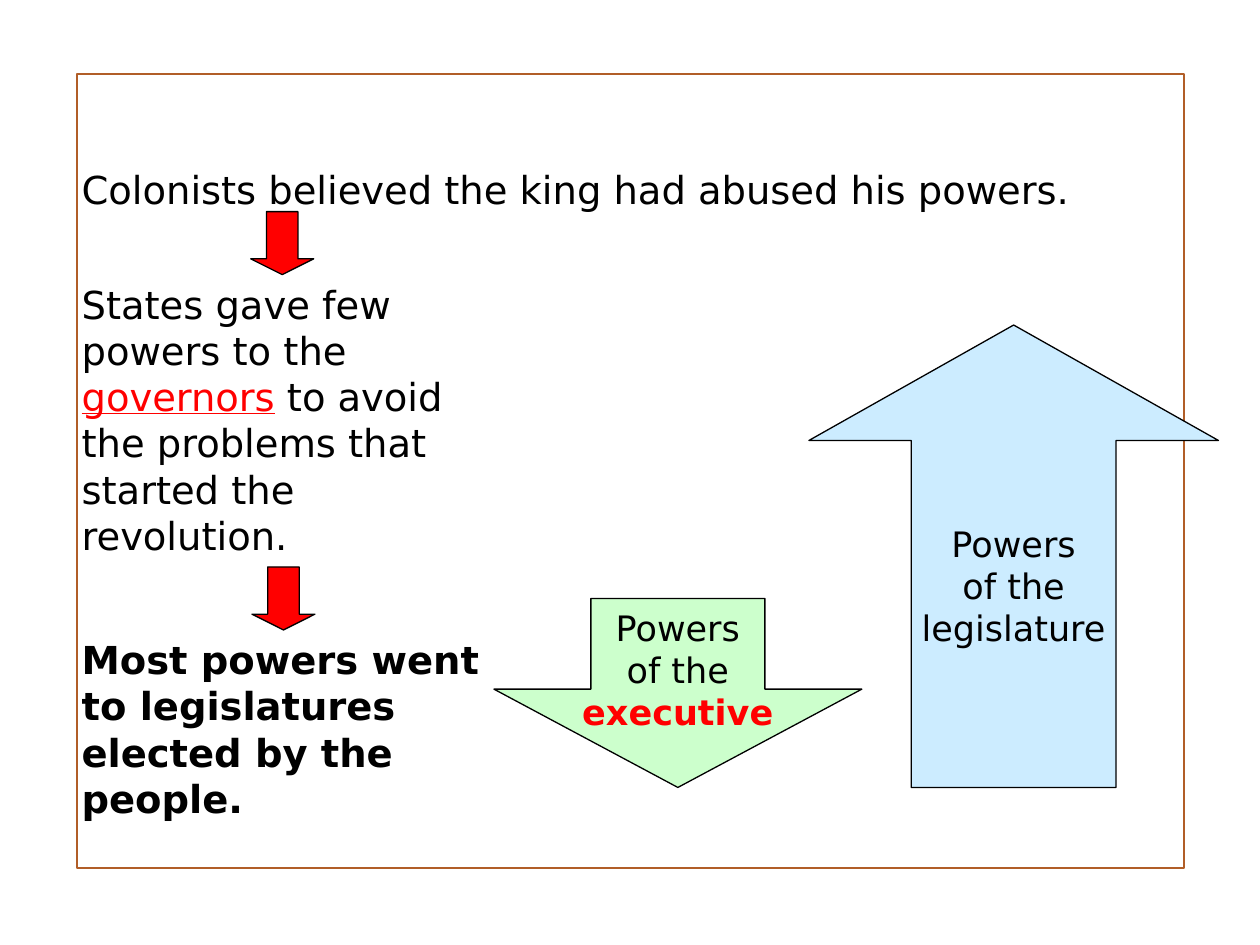
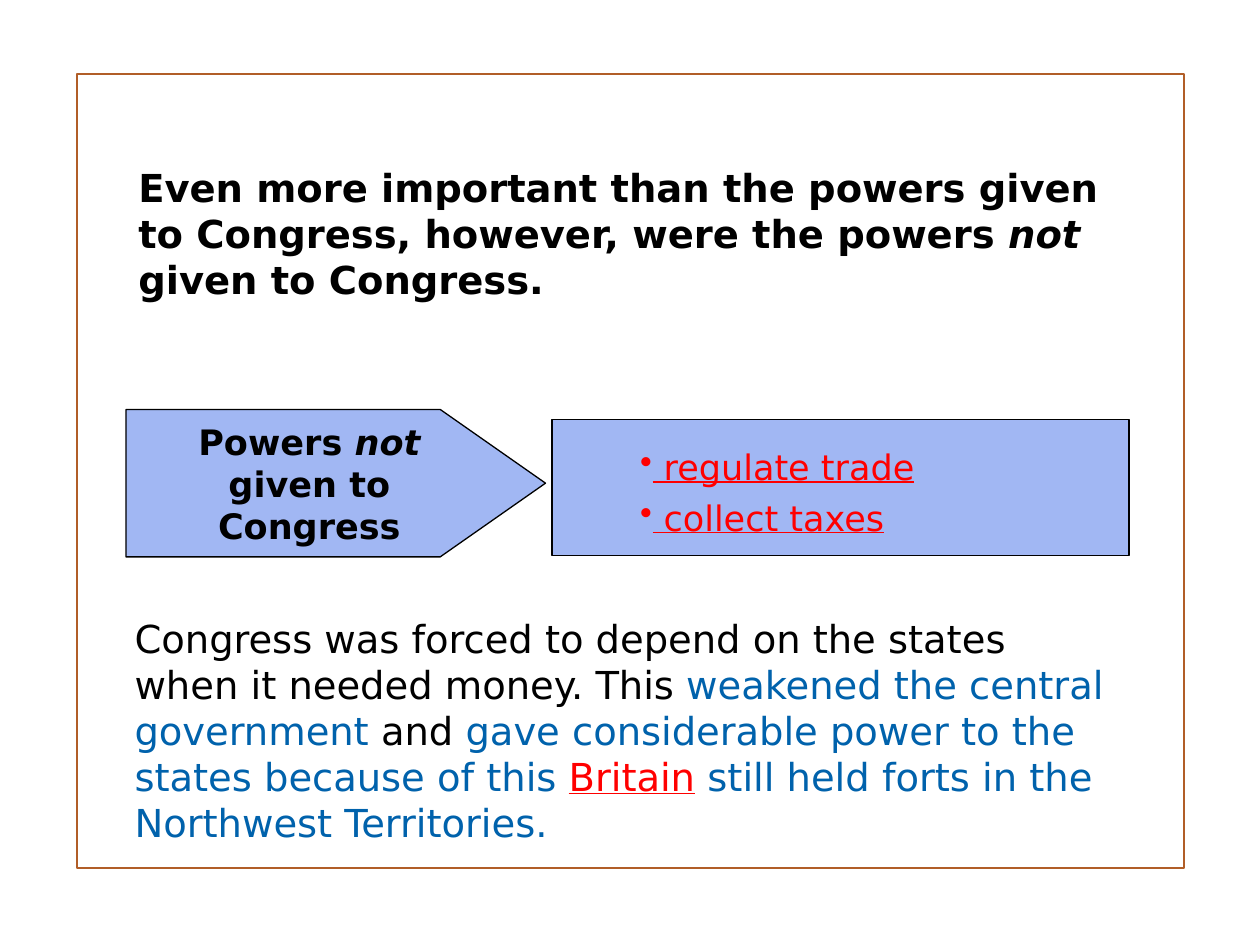
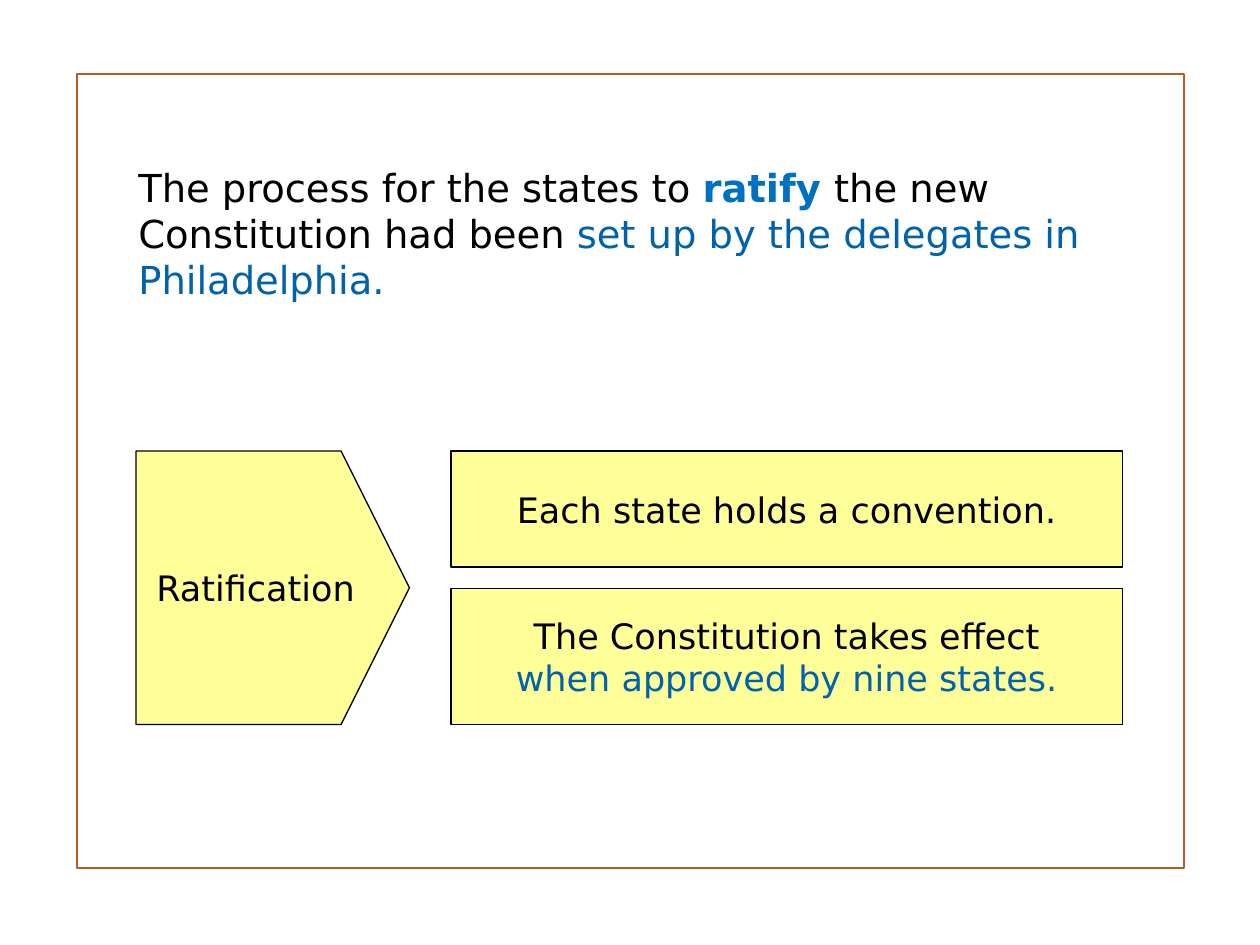
from dataclasses import dataclass, field
from typing import NamedTuple, Optional

from lxml import etree
from pptx import Presentation
from pptx import util as u
from pptx.dml import color as dml
from pptx.enum import shapes as kinds, text as txt
from pptx.oxml import ns


# Theme: colours, type sizes and text styles
@dataclass(frozen=True)
class Theme:
    font: str = "DejaVu Sans"
    body: int = 22
    label: int = 20
    outline: float = 0.75
    frame_outline: float = 1.25
    black: str = "000000"
    red: str = "FF0000"
    blue: str = "0062AC"
    bright_blue: str = "0070C0"
    frame: str = "B15E28"
    green_fill: str = "CCFFCC"
    sky_fill: str = "CCECFF"
    violet_fill: str = "A1B7F3"
    yellow_fill: str = "FFFF99"


THEME = Theme()
BOLD = {"bold": True}
BOLD_ITALIC = {"bold": True, "italic": True}
UNDERLINE = {"underline": True}


class Span(NamedTuple):
    text: str
    color: str = THEME.black
    format: dict = {}


class Place(NamedTuple):
    left: float
    top: float
    width: float
    height: float

    def lengths(self) -> list:
        return [u.Inches(value) for value in self]


Lines = list[list[Span]]


@dataclass(frozen=True)
class Statement:
    place: Place
    spans: list[Span]


@dataclass(frozen=True)
class Block:
    kind: kinds.MSO_SHAPE
    place: Place
    fill: Optional[str]
    lines: Lines = field(default_factory=list)
    adjust: tuple = ()
    bullet: str = ""
    inset: float = 0.1
    line_color: str = THEME.black
    line_width: float = THEME.outline


# Drawing
def write_lines(frame, lines: Lines, size: int, align, bullet: str = "") -> None:
    for index, spans in enumerate(lines):
        paragraph = frame.paragraphs[0] if index == 0 else frame.add_paragraph()
        paragraph.alignment = align
        if bullet:
            paragraph.line_spacing = 1.2
            mark = etree.SubElement(paragraph._p.get_or_add_pPr(), ns.qn("a:buChar"))
            mark.set("char", bullet)
        for span in spans:
            run = paragraph.add_run()
            run.text = span.text
            values = {"name": THEME.font, "size": u.Pt(size), **span.format}
            for name, value in values.items():
                setattr(run.font, name, value)
            run.font.color.rgb = dml.RGBColor.from_string(span.color)


def draw_statement(slide, statement: Statement) -> None:
    frame = slide.shapes.add_textbox(*statement.place.lengths()).text_frame
    frame.word_wrap = True
    frame.auto_size = txt.MSO_AUTO_SIZE.SHAPE_TO_FIT_TEXT
    write_lines(frame, [statement.spans], THEME.body, txt.PP_ALIGN.LEFT)


def draw_block(slide, block: Block):
    shape = slide.shapes.add_shape(block.kind, *block.place.lengths())
    shape.shadow.inherit = False
    for index, value in enumerate(block.adjust):
        shape.adjustments[index] = value
    if block.fill:
        shape.fill.solid()
        shape.fill.fore_color.rgb = dml.RGBColor.from_string(block.fill)
    else:
        shape.fill.background()
    shape.line.color.rgb = dml.RGBColor.from_string(block.line_color)
    shape.line.width = u.Pt(block.line_width)
    frame = shape.text_frame
    settings = {"word_wrap": False, "vertical_anchor": txt.MSO_ANCHOR.MIDDLE,
                "margin_left": u.Inches(block.inset)}
    for name, value in settings.items():
        setattr(frame, name, value)
    align = txt.PP_ALIGN.LEFT if block.bullet else txt.PP_ALIGN.CENTER
    write_lines(frame, block.lines, THEME.label, align, block.bullet)
    return shape


# Content
SHAPE = kinds.MSO_SHAPE
PAGE_FRAME = Block(SHAPE.RECTANGLE, Place(0.61, 0.59, 8.79, 6.3), None,
                   line_color=THEME.frame, line_width=THEME.frame_outline)
OPENING = Place(1, 1.25, 8, 1.21)


def step_arrow(left: float, top: float) -> Block:
    return Block(SHAPE.DOWN_ARROW, Place(left, top, 0.5, 0.5), THEME.red,
                 adjust=(0.5, 0.25))


def yellow_block(kind, place: Place, lines: Lines, adjust: tuple = ()) -> Block:
    return Block(kind, place, THEME.yellow_fill, lines, adjust)


STATE_POWERS = [
    Statement(Place(0.55, 1.27, 9.3, 0.47),
              [Span("Colonists believed the king had abused his powers.")]),
    Statement(Place(0.55, 2.18, 3.33, 2.32), [
        Span("States gave few powers to the "),
        Span("governors", THEME.red, UNDERLINE),
        Span(" to avoid the problems that started the revolution."),
    ]),
    Block(SHAPE.DOWN_ARROW, Place(3.92, 4.75, 2.92, 1.5), THEME.green_fill,
          [[Span("Powers")], [Span("of the")], [Span("executive", THEME.red, BOLD)]],
          (0.473, 0.52)),
    Block(SHAPE.UP_ARROW, Place(6.42, 2.58, 3.25, 3.67), THEME.sky_fill,
          [[Span("Powers")], [Span("of the")], [Span("legislature")]],
          (0.5, 0.282)),
    Statement(Place(0.55, 5, 3.51, 1.58), [
        Span("Most powers went to legislatures elected by the people.", format=BOLD),
    ]),
    step_arrow(2, 4.5),
    step_arrow(1.99, 1.68),
]

CONGRESS_LIMITS = [
    Statement(OPENING, [
        Span("Even more important than the powers given to Congress, "
             "however, were the powers ", format=BOLD),
        Span("not", format=BOLD_ITALIC),
        Span(" given to Congress.", format=BOLD),
    ]),
    Block(SHAPE.RECTANGLE, Place(4.38, 3.33, 4.58, 1.08), THEME.violet_fill,
          [[Span(power, THEME.red, UNDERLINE)]
           for power in (" regulate trade", " collect taxes")],
          bullet="•", inset=0.7),
    Block(SHAPE.PENTAGON, Place(1, 3.25, 3.33, 1.17), THEME.violet_fill,
          [[Span("Powers ", format=BOLD), Span("not", format=BOLD_ITALIC)],
           [Span("given to", format=BOLD)], [Span("Congress", format=BOLD)]],
          (0.714,)),
    Statement(Place(0.97, 4.83, 8, 1.95), [
        Span("Congress was forced to depend on the states when it needed money. This "),
        Span("weakened the central government ", THEME.blue),
        Span("and "),
        Span("gave considerable power to the states because of this ", THEME.blue),
        Span("Britain", THEME.red, UNDERLINE),
        Span(" still held forts in the Northwest Territories.", THEME.blue),
    ]),
]

RATIFICATION = [
    Statement(OPENING, [
        Span("The process for the states to "),
        Span("ratify ", THEME.bright_blue, BOLD),
        Span("the new Constitution had been "),
        Span("set up by the delegates in Philadelphia.", THEME.blue),
    ]),
    yellow_block(SHAPE.RECTANGLE, Place(3.58, 3.58, 5.33, 0.92),
                 [[Span("Each state holds a convention.")]]),
    yellow_block(SHAPE.RECTANGLE, Place(3.58, 4.67, 5.33, 1.08),
                 [[Span("The Constitution takes effect")],
                  [Span("when approved by nine states.", THEME.blue)]]),
    yellow_block(SHAPE.PENTAGON, Place(1.08, 3.58, 2.17, 2.17),
                 [[Span("Ratification")]], (0.25,)),
]


def main() -> None:
    deck = Presentation()
    deck.slide_width, deck.slide_height = u.Inches(10), u.Inches(7.5)
    blank = deck.slide_layouts[6]
    slides = [deck.slides.add_slide(blank) for _ in range(3)]

    # The page frame belongs to the layout that all slides share
    page_frame = draw_block(slides[0], PAGE_FRAME)
    blank.shapes.element.append(page_frame.element)

    for slide, parts in zip(slides, (STATE_POWERS, CONGRESS_LIMITS, RATIFICATION)):
        for part in parts:
            draw = draw_statement if isinstance(part, Statement) else draw_block
            draw(slide, part)
    deck.save("out.pptx")


if __name__ == "__main__":
    main()
